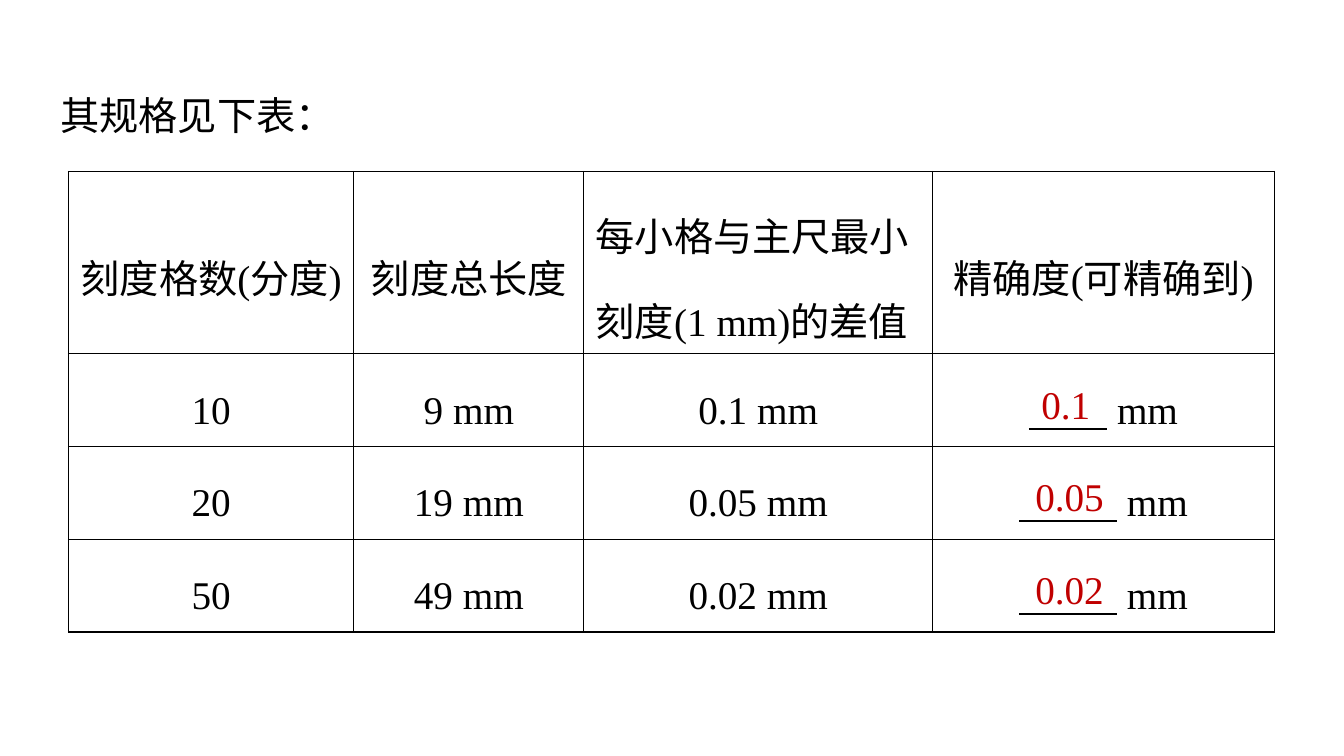
from dataclasses import dataclass

from lxml import etree
from pptx import Presentation
from pptx.dml.color import RGBColor
from pptx.enum.text import MSO_ANCHOR, MSO_AUTO_SIZE, PP_ALIGN
from pptx.oxml.ns import qn
from pptx.util import Inches, Pt

CENTER, LEFT, JUSTIFY = PP_ALIGN.CENTER, PP_ALIGN.LEFT, PP_ALIGN.JUSTIFY
MIDDLE = MSO_ANCHOR.MIDDLE
GROW = MSO_AUTO_SIZE.SHAPE_TO_FIT_TEXT


@dataclass(frozen=True)
class Theme:
    font: str = "Times New Roman"
    size: int = 28
    ink: str = "000000"
    answer: str = "C00000"
    border: int = 1


THEME = Theme()

HEADERS = ["刻度格数(分度)", "刻度总长度", "每小格与主尺最小刻度(1 mm)的差值", "精确度(可精确到)"]
# divisions, total length, difference per division, answer, characters in the blank
VERNIERS = [
    ("10", "9 mm", "0.1 mm", "0.1", 8),
    ("20", "19 mm", "0.05 mm", "0.05", 10),
    ("50", "49 mm", "0.02 mm", "0.02", 10),
]
COLUMN_WIDTHS = [2.83, 2.28, 3.46, 3.39]
HEADER_HEIGHT, ROW_HEIGHT = 1.81, 0.92
TABLE_LEFT, TABLE_TOP = 0.68, 1.7


def add_span(para, text, color=THEME.ink, underline=False):
    span = para.add_run()
    span.text = text
    formats = {"name": THEME.font, "size": Pt(THEME.size), "underline": underline}
    for name, value in formats.items():
        setattr(span.font, name, value)
    span.font.color.rgb = RGBColor.from_string(color)


def add_borders(cell):
    """Draw all four sides; call before setting the cell's fill."""
    properties = cell._tc.get_or_add_tcPr()
    for side in ("lnL", "lnR", "lnT", "lnB"):
        line = etree.SubElement(properties, qn(f"a:{side}"), w=str(Pt(THEME.border)))
        fill = etree.SubElement(line, qn("a:solidFill"))
        etree.SubElement(fill, qn("a:srgbClr"), val=THEME.ink)


deck = Presentation()
deck.slide_width, deck.slide_height = Inches(13.33), Inches(7.5)
page = deck.slides.add_slide(deck.slide_layouts[6])

# Introduction
intro = page.shapes.add_textbox(Inches(0.47), Inches(0.6), Inches(12.39), Inches(0.76))
frame = intro.text_frame
intro_format = {
    "word_wrap": True, "auto_size": GROW,
    "margin_left": Inches(0.13), "margin_right": Inches(0.13),
    "margin_top": Inches(0.07), "margin_bottom": Inches(0.07),
}
for name, value in intro_format.items():
    setattr(frame, name, value)
para = frame.paragraphs[0]
para.alignment, para.line_spacing = JUSTIFY, 1.5
add_span(para, "其规格见下表：")

# Table of vernier scales
row_heights = [HEADER_HEIGHT] + [ROW_HEIGHT] * len(VERNIERS)
table = page.shapes.add_table(
    len(row_heights), len(COLUMN_WIDTHS), Inches(TABLE_LEFT), Inches(TABLE_TOP),
    Inches(sum(COLUMN_WIDTHS)), Inches(sum(row_heights))).table
table.first_row = table.horz_banding = False
for column, width in zip(table.columns, COLUMN_WIDTHS):
    column.width = Inches(width)
for row, height in zip(table.rows, row_heights):
    row.height = Inches(height)

cell_format = {
    "vertical_anchor": MIDDLE,
    "margin_left": Inches(0.04), "margin_right": Inches(0.04),
    "margin_top": 0, "margin_bottom": 0,
}
for cell in table.iter_cells():
    for name, value in cell_format.items():
        setattr(cell, name, value)
    add_borders(cell)
    cell.fill.background()
    para = cell.text_frame.paragraphs[0]
    para.alignment, para.line_spacing = CENTER, 1.5

for r, texts in enumerate([HEADERS] + [vernier[:3] for vernier in VERNIERS]):
    for c, text in enumerate(texts):
        add_span(table.cell(r, c).text_frame.paragraphs[0], text)

difference_header = table.cell(0, 2).text_frame.paragraphs[0]
difference_header.alignment = LEFT
difference_header._p.get_or_add_pPr().set("marL", str(Inches(0.08)))

# Underlined blanks with the answers above them
for i, (_, _, _, answer, blank_length) in enumerate(VERNIERS):
    para = table.cell(i + 1, 3).text_frame.paragraphs[0]
    add_span(para, " " * blank_length, underline=True)
    add_span(para, " mm")

    left, width = (10.23, 0.69) if len(answer) == 3 else (10.17, 0.89)
    top = 3.72 + i * ROW_HEIGHT
    box = page.shapes.add_textbox(Inches(left), Inches(top), Inches(width), Inches(0.57))
    box.text_frame.word_wrap = False
    box.text_frame.auto_size = GROW
    add_span(box.text_frame.paragraphs[0], answer, THEME.answer)

deck.save("out.pptx")
